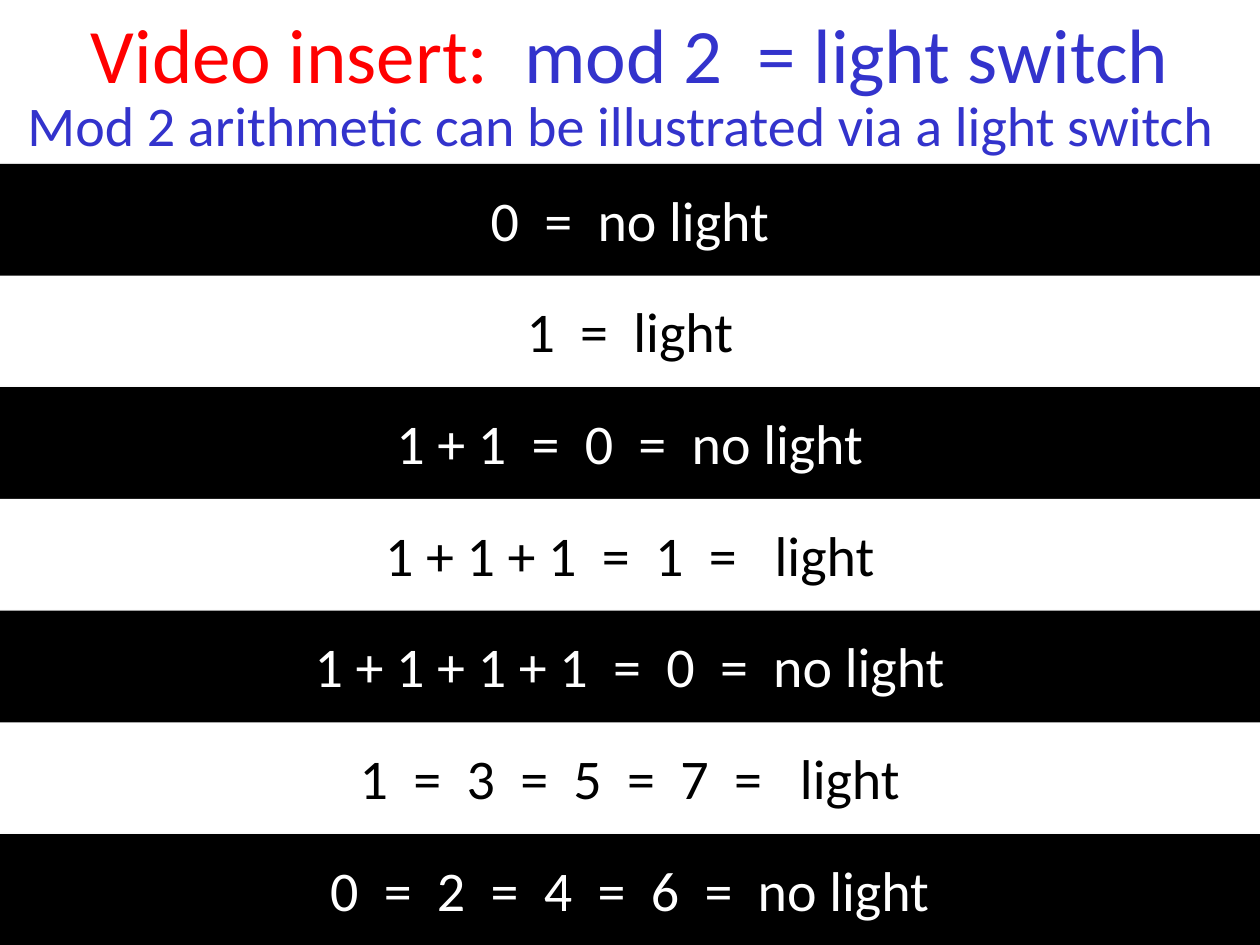
"""Build the slide that shows mod 2 arithmetic as a light switch."""
from pptx import Presentation
from pptx.dml.color import RGBColor
from pptx.enum.shapes import MSO_SHAPE as Shape
from pptx.enum.text import MSO_ANCHOR as Anchor, MSO_AUTO_SIZE as Fit, PP_ALIGN as Align
from pptx.util import Inches, Pt

BLACK = RGBColor(0, 0, 0)
WHITE = RGBColor(255, 255, 255)
RED = RGBColor(255, 0, 0)
BLUE = RGBColor(0x33, 0x33, 0xCC)


def add_text(left, top, width, height, runs, size=32, align=Align.CENTER):
    box = slide.shapes.add_textbox(Inches(left), Inches(top), Inches(width), Inches(height))
    frame = box.text_frame
    frame.word_wrap = True
    para = frame.paragraphs[0]
    para.alignment = align
    for words, color in runs:
        run = para.add_run()
        run.text = words
        run.font.name = "Calibri"
        run.font.size = Pt(size)
        run.font.color.rgb = color
    return box


deck = Presentation()
deck.slide_width, deck.slide_height = Inches(10), Inches(7.5)
slide = deck.slides.add_slide(deck.slide_layouts[6])

rows = [
    ("0  =  no light", 8.61, False),
    ("1  =  light", 2.43, False),
    ("1 + 1  =  0  =  no light", 4.48, True),
    ("1 + 1 + 1  =  1  =   light", 4.55, False),
    ("1 + 1 + 1 + 1  =  0  =  no light", 5.95, True),
    ("1  =  3  =  5  =  7  =   light", 5.55, False),
    ("0  =  2  =  4  =  6  =  no light", 5.68, True),
]
tops = [1.3 + 5.32 * i / 6 for i in range(len(rows))]

for i, top in enumerate(tops):
    band = slide.shapes.add_shape(
        Shape.RECTANGLE, Inches(-0.02), Inches(top), Inches(10.04), Inches(0.89))
    band.fill.solid()
    band.fill.fore_color.rgb = WHITE if i % 2 else BLACK
    band.line.fill.background()

title = add_text(0.5, -0.21, 9, 1.25,
                 [("Video insert:  ", RED), ("mod 2  = light switch", BLUE)], 44)
title.text_frame.vertical_anchor = Anchor.MIDDLE

lead = add_text(0.12, 0.67, 9.76, 0.64,
                [("Mod 2 arithmetic can be illustrated via a light switch", BLUE)],
                align=Align.LEFT)
lead.text_frame.auto_size = Fit.SHAPE_TO_FIT_TEXT

for i, (words, width, framed) in enumerate(rows):
    color = BLACK if i % 2 else WHITE
    box = add_text(5 - width / 2, tops[i] + 0.12, width, 0.64, [(words, color)])
    box.text_frame.auto_size = Fit.SHAPE_TO_FIT_TEXT
    if framed:
        box.line.color.rgb = BLACK
        box.line.width = Pt(0.75)

deck.save("out.pptx")
